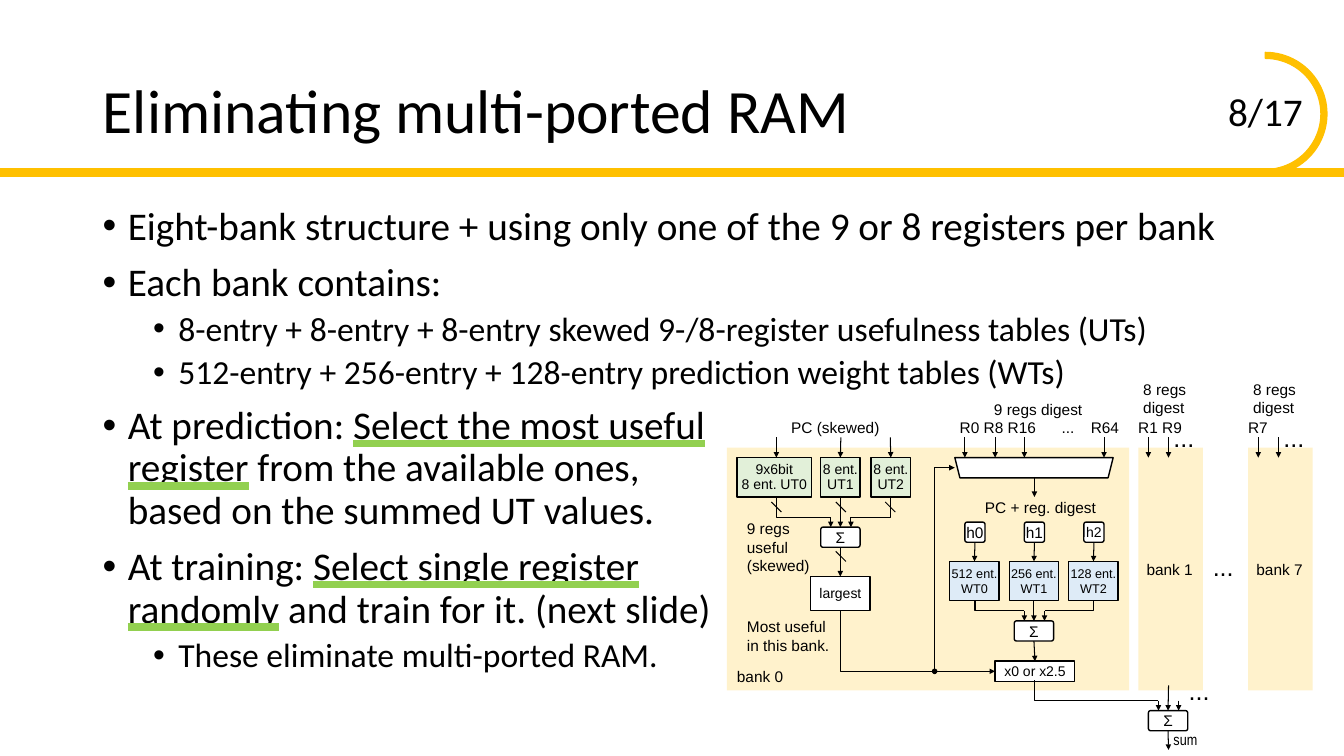
"""Build the slide on eliminating multi-ported RAM with its bank diagram."""
from dataclasses import dataclass, field
from typing import Any

from lxml.etree import SubElement
from pptx import Presentation
from pptx.dml.color import RGBColor
from pptx.enum.shapes import MSO_CONNECTOR, MSO_SHAPE
from pptx.enum.text import MSO_ANCHOR, MSO_AUTO_SIZE, MSO_UNDERLINE, PP_ALIGN
from pptx.oxml.ns import qn
from pptx.util import Inches, Pt


@dataclass(frozen=True)
class Theme:
    ink: str = "000000"
    white: str = "FFFFFF"
    accent: str = "FFC000"
    mark: str = "92D050"
    bank: str = "FFF2CC"
    useful: str = "E2F0D9"
    weight: str = "DEEBF7"
    body_font: str = "Calibri"
    label_font: str = "Arial"
    narrow_font: str = "Arial Narrow"
    title: float = 44
    body: float = 28
    sub: float = 24
    dots: float = 18
    label: float = 11
    box: float = 10
    table: float = 9
    outline: float = 1
    wire: float = 0.75
    rule: float = 6


T = Theme()


@dataclass
class Box:
    name: str
    x: float
    y: float
    w: float
    h: float
    text: str = ""
    fill: str = T.white
    size: float = T.box
    shape: MSO_SHAPE = MSO_SHAPE.RECTANGLE
    outlined: bool = True
    para: dict[str, Any] = field(default_factory=lambda: {"alignment": PP_ALIGN.CENTER})
    anchor: MSO_ANCHOR = MSO_ANCHOR.MIDDLE


@dataclass
class Label:
    text: str
    x: float
    y: float
    w: float = 0.39
    h: float = 0.2
    size: float = T.label
    font: str = T.label_font
    align: PP_ALIGN = PP_ALIGN.LEFT


@dataclass
class Wire:
    x0: float
    y0: float
    x1: float
    y1: float
    src: str = ""
    dst: str = ""
    site: int = 0
    tail: str = "triangle"


@dataclass
class Bullet:
    runs: list[tuple[str, bool]]
    level: int = 0


def apply(obj: Any, **values: Any) -> None:
    for key, value in values.items():
        setattr(obj, key, value)


def style_font(font: Any, name: str, size: float) -> None:
    apply(font, name=name, size=Pt(size))
    font.color.rgb = RGBColor.from_string(T.ink)


def write(tf: Any, text: str, font: str, size: float, para: dict[str, Any], **frame: Any) -> None:
    apply(tf, **{"word_wrap": False, "vertical_anchor": MSO_ANCHOR.MIDDLE, **frame})
    for i, line in enumerate(text.split("\n")):
        p = tf.paragraphs[0] if i == 0 else tf.add_paragraph()
        apply(p, **para)
        r = p.add_run()
        r.text = line
        style_font(r.font, font, size)


def style_line(sp: Any, width: float, color: str = T.ink, head: str = "", tail: str = "") -> None:
    sp.line.color.rgb = RGBColor.from_string(color)
    sp.line.width = Pt(width)
    ln = sp.line._get_or_add_ln()
    for tag, end in (("a:headEnd", head), ("a:tailEnd", tail)):
        if end:
            SubElement(ln, qn(tag), type=end, w="sm", len="sm")


def add_box(s: Any, b: Box) -> Any:
    sp = s.shapes.add_shape(b.shape, *map(Inches, (b.x, b.y, b.w, b.h)))
    sp.shadow.inherit = False
    sp.fill.solid()
    sp.fill.fore_color.rgb = RGBColor.from_string(b.fill)
    if b.outlined:
        style_line(sp, T.outline, T.accent if b.fill == T.accent else T.ink)
    else:
        sp.line.fill.background()
    if b.shape == MSO_SHAPE.ROUNDED_RECTANGLE:
        sp.adjustments[0] = 0.114
    elif b.outlined:
        apply(sp.text_frame, **{f"margin_{side}": 0 for side in ("left", "right", "top", "bottom")})
    if b.text:
        write(sp.text_frame, b.text, T.label_font, b.size, b.para, vertical_anchor=b.anchor)
    return sp


def add_label(s: Any, lb: Label, **frame: Any) -> None:
    sp = s.shapes.add_shape(MSO_SHAPE.RECTANGLE, *map(Inches, (lb.x, lb.y, lb.w, lb.h)))
    sp.shadow.inherit = False
    sp.fill.background()
    sp.line.fill.background()
    write(sp.text_frame, lb.text, lb.font, lb.size, {"alignment": lb.align}, **frame)


def add_wire(s: Any, w: Wire, boxes: dict[str, Any], width: float = T.wire, color: str = T.ink) -> None:
    c = s.shapes.add_connector(MSO_CONNECTOR.STRAIGHT, *map(Inches, (w.x0, w.y0, w.x1, w.y1)))
    if w.src:
        c.begin_connect(boxes[w.src], 2)
    if w.dst:
        c.end_connect(boxes[w.dst], w.site)
    style_line(c, width, color, tail=w.tail)
    SubElement(c._element.spPr, qn("a:effectLst"))


def add_elbow(s: Any, points: list[tuple[float, float]], head: str = "", tail: str = "") -> None:
    (x, y), *rest = [(Inches(px), Inches(py)) for px, py in points]
    fb = s.shapes.build_freeform(x, y)
    fb.add_line_segments(rest, close=False)
    sp = fb.convert_to_shape()
    sp.shadow.inherit = False
    sp.fill.background()
    style_line(sp, T.wire, head=head, tail=tail)


def add_bullets(s: Any, bullets: list[Bullet]) -> None:
    tf = s.shapes.add_textbox(*map(Inches, (0.92, 2, 11.5, 4.8))).text_frame
    tf.word_wrap = True
    for i, b in enumerate(bullets):
        p = tf.paragraphs[0] if i == 0 else tf.add_paragraph()
        apply(p, level=b.level, line_spacing=0.9, space_before=Pt(5 if b.level else 10))
        pPr = p._p.get_or_add_pPr()
        pPr.set("marL", str(Inches(0.75 if b.level else 0.25)))
        pPr.set("indent", str(Inches(-0.25)))
        SubElement(pPr, qn("a:buFont"), typeface=T.label_font)
        SubElement(pPr, qn("a:buChar"), char="•")
        for text, marked in b.runs:
            for j, line in enumerate(text.split("\n")):
                if j:
                    p.add_line_break()
                r = p.add_run()
                r.text = line
                style_font(r.font, T.body_font, T.sub if b.level else T.body)
                if marked:
                    r.font.underline = MSO_UNDERLINE.HEAVY_LINE
                    rPr = r._r.get_or_add_rPr()
                    u = SubElement(rPr, qn("a:uFill"))
                    SubElement(SubElement(u, qn("a:solidFill")), qn("a:srgbClr"), val=T.mark)
                    rPr.find(qn("a:latin")).addprevious(u)


def add_diagram(s: Any) -> None:
    rounded, right = MSO_SHAPE.ROUNDED_RECTANGLE, {"alignment": PP_ALIGN.RIGHT}
    tight = {"alignment": PP_ALIGN.CENTER, "line_spacing": Pt(11)}
    side_banks = [(11.29, "bank 1", "R1 R9"), (12.38, "bank 7", "R7")]
    hash_x = [9.67, 10.26, 10.85]
    ut_x = [7.7, 8.34, 8.83]
    boxes = [Box("bank 0", 7.21, 4.44, 3.99, 2.41, "bank 0", T.bank, T.label, outlined=False,
                 para={"alignment": PP_ALIGN.LEFT}, anchor=MSO_ANCHOR.BOTTOM)]
    boxes += [Box(name, x, 4.44, 0.64, 2.41, name, T.bank, T.label, outlined=False, para=right)
              for x, name, _ in side_banks]
    for i, (x, entries) in enumerate(zip(hash_x, (512, 256, 128))):
        boxes += [Box(f"WT{i}", x - 0.25, 5.57, 0.49, 0.39, f"{entries} ent.\nWT{i}", T.weight, T.table),
                  Box(f"h{i}", x - 0.1, 5.18, 0.2, 0.2, f"h{i}", size=T.box if i == 2 else T.label,
                      shape=rounded)]
    boxes += [Box(f"UT{i}", x, 4.54, w, 0.39, f"{text}UT{i}", T.useful, para=tight)
              for i, (x, w, text) in enumerate(((7.31, 0.74, "9x6bit\n8 ent. "), (8.14, 0.39, "8 ent.\n"),
                                                (8.64, 0.39, "8 ent.\n")))]
    boxes += [Box(name, x, y, 0.39, 0.2, "Σ", size=T.label, shape=rounded)
              for name, x, y in (("UT sum", 8.14, 5.23), ("WT sum", 10.06, 6.16), ("total", 11.39, 7.05))]
    boxes += [Box("largest", 8.04, 5.72, 0.59, 0.34, "largest", para=tight),
              Box("scale", 9.87, 6.56, 0.79, 0.2, "x0 or x2.5", para=tight),
              Box("mux", 9.47, 4.54, 1.57, 0.2, shape=MSO_SHAPE.TRAPEZOID)]
    drawn = {b.name: add_box(s, b) for b in boxes}
    drawn["mux"].rotation = 180

    wires = [Wire(x, 5.37, x, 5.57, f"h{i}", f"WT{i}") for i, x in enumerate(hash_x)]
    wires += [Wire(x, 4.34, x, 4.54, dst=f"UT{i}" if i else "") for i, x in enumerate(ut_x)]
    wires += [Wire(x, 4.34, x, 4.54) for x in (9.57, 9.87, 10.16, 10.95)]
    wires += [Wire(x + dx, 4.34, x + dx, 4.54) for x, _, _ in side_banks for dx in (0.1, 0.3)]
    for x, y in ((8.34, 5.23), (10.26, 6.16), (11.59, 7.05)):
        wires += [Wire(x + dx, y - 0.1, x + dx, y) for dx in (-0.1, 0.1)]
    wires += [Wire(8.34, 4.93, 8.34, 5.23, "UT1", "UT sum"), Wire(8.34, 5.43, 8.34, 5.72, "UT sum", "largest"),
              Wire(10.26, 5.96, 10.26, 6.16, "WT1", "WT sum"), Wire(10.26, 6.36, 10.26, 6.56, "WT sum", "scale"),
              Wire(11.59, 6.8, 11.59, 7.05, dst="total"), Wire(11.59, 7.24, 11.59, 7.44, src="total"),
              Wire(9.27, 6.66, 9.87, 6.66, dst="scale", site=1), Wire(10.26, 4.73, 10.26, 4.93)]
    wires += [Wire(x - 0.05, y, x + 0.05, y + 0.1, tail="")
              for x, y in [(x, 4.98) for x in ut_x] + [(8.34, 5.47)]]
    for w in wires:
        add_wire(s, w, drawn)
    for x0, y0, x1, y1 in ((7.7, 4.93, 8.24, 5.13), (8.83, 4.93, 8.44, 5.13), (9.67, 5.96, 10.16, 6.06),
                           (10.85, 5.96, 10.36, 6.06), (8.34, 6.06, 9.27, 6.66), (10.26, 6.75, 11.49, 6.95)):
        add_elbow(s, [(x0, y0), (x0, y1), (x1, y1)])
    add_elbow(s, [(9.27, 6.66), (9.27, 4.64), (9.47, 4.64)], "oval", "triangle")

    labels = [Label("PC (skewed)", 8.09, 4.14, align=PP_ALIGN.CENTER), Label("9 regs digest", 9.76, 3.96),
              Label("R0 R8 R16", 9.42, 4.14), Label("...", 10.43, 4.14), Label("R64", 10.72, 4.14),
              Label("PC + reg. digest", 9.67, 4.93), Label("9 regs\nuseful\n(skewed)", 7.31, 5.28, 0.74, 0.3),
              Label("Most useful\nin this bank.", 7.31, 6.21), Label("sum", 11.54, 7.24, font=T.narrow_font),
              Label("...", 11.93, 5.52, 0.79, size=T.dots), Label("...", 11.69, 6.75, 0.79, size=T.dots)]
    for x, _, regs in side_banks:
        labels += [Label("8 regs\ndigest", x - 0.05, 3.85), Label(regs, x - 0.1, 4.14),
                   Label("...", x + 0.25, 4.24, size=T.dots)]
    for lb in labels:
        add_label(s, lb)


def main() -> None:
    prs = Presentation()
    apply(prs, slide_width=Inches(13.33), slide_height=Inches(7.5))
    s = prs.slides.add_slide(prs.slide_layouts[5])
    add_label(s, Label("8/17", 10.02, 0.82, 3, 0.4, T.body, T.body_font, PP_ALIGN.RIGHT),
              word_wrap=True, vertical_anchor=MSO_ANCHOR.TOP)
    add_wire(s, Wire(0, 1.71, 13.33, 1.71, tail=""), {}, T.rule, T.accent)
    arc = add_box(s, Box("arc", 11.94, 0.52, 1.22, 1.22, fill=T.accent, shape=MSO_SHAPE.BLOCK_ARC))
    arc.rotation = 90
    for i, value in enumerate((108, 0.936, 0.048)):
        arc.adjustments[i] = value
    title = s.shapes.title
    apply(title, left=Inches(0.92), top=Inches(0.4), width=Inches(11.5), height=Inches(1.45))
    write(title.text_frame, "Eliminating multi-ported RAM", T.body_font, T.title,
          {"alignment": PP_ALIGN.LEFT, "line_spacing": 0.9}, word_wrap=True, auto_size=MSO_AUTO_SIZE.NONE)
    add_bullets(s, [
        Bullet([("Eight-bank structure + using only one of the 9 or 8 registers per bank", False)]),
        Bullet([("Each bank contains:", False)]),
        Bullet([("8-entry + 8-entry + 8-entry skewed 9-/8-register usefulness tables (UTs)", False)], 1),
        Bullet([("512-entry + 256-entry + 128-entry prediction weight tables (WTs)", False)], 1),
        Bullet([("At prediction: ", False), ("Select the most useful\nregister", True),
                (" from the available ones,\nbased on the summed UT values.", False)]),
        Bullet([("At training: ", False), ("Select single register\nrandomly", True),
                (" and train for it. (next slide)", False)]),
        Bullet([("These eliminate multi-ported RAM.", False)], 1)])
    add_diagram(s)
    prs.save("out.pptx")


if __name__ == "__main__":
    main()
